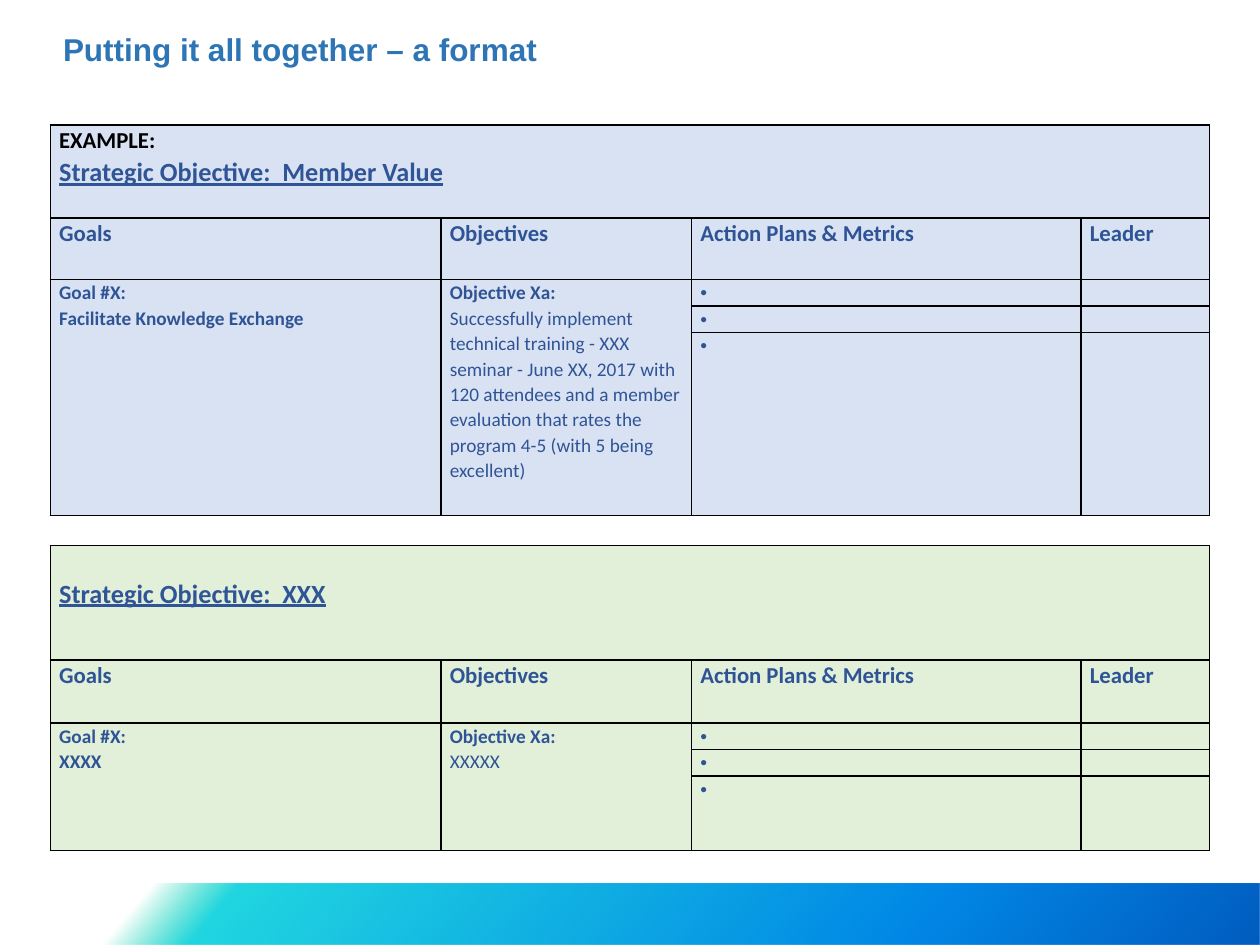
from lxml import etree
from pptx import Presentation
from pptx.dml.color import RGBColor as RGB
from pptx.enum.shapes import MSO_SHAPE as SHAPE
from pptx.enum.text import MSO_ANCHOR as ANCHOR, PP_ALIGN as ALIGN
from pptx.oxml import parse_xml
from pptx.oxml.ns import nsdecls, qn
from pptx.util import Inches, Pt

BLACK = RGB(0x00, 0x00, 0x00)
TITLE_BLUE = RGB(0x2E, 0x75, 0xB6)
HEADING_BLUE = RGB(0x2F, 0x55, 0x97)
TEXT_BLUE = RGB(0x2F, 0x54, 0x96)
PALE_BLUE = RGB(0xD9, 0xE2, 0xF3)
PALE_GREEN = RGB(0xE2, 0xEF, 0xD9)

# Gradient stops of the footer band: position %, colour, opacity %
BAND_STOPS = [(19, RGB(0x03, 0xD4, 0xA8), 0), (25, RGB(0x21, 0xD6, 0xE0), 100),
              (75, RGB(0x00, 0x87, 0xE6), 100), (100, RGB(0x00, 0x5C, 0xBF), 100)]
BAND_ANGLE = 40

HEADERS = ["Goals", "Objectives", "Action Plans & Metrics", "Leader"]
COLS = [31, 19.9, 30.9, 10.2]
NBSP = "\N{NO-BREAK SPACE}"


class Deck:
    """Style and current slide; lengths are units of a 100 x 75 grid."""
    font = "Calibri"
    small, medium, large = 11, 13, 15
    spacing = 1.07
    margin = 0.7

    def __init__(self):
        self.prs = Presentation()
        self.prs.slide_width, self.prs.slide_height = Inches(10), Inches(7.5)
        self.slide = self.prs.slides.add_slide(self.prs.slide_layouts[5])

    def grid(self, *units):
        return [round(self.prs.slide_width * u / 100) for u in units]

    def title(self, text, *box):
        s = self.slide.shapes.title
        s.left, s.top, s.width, s.height = self.grid(*box)
        tf = s.text_frame
        tf.text = text
        tf.word_wrap = False
        tf.vertical_anchor = ANCHOR.MIDDLE
        p = tf.paragraphs[0]
        p.alignment = ALIGN.LEFT
        self.style(p.runs[0], 18, TITLE_BLUE, font="Arial")

    def band(self, *box):
        s = self.slide.shapes.add_shape(SHAPE.RECTANGLE, *self.grid(*box))
        s.shadow.inherit = False
        s.line.fill.background()
        stops = "".join(
            f'<a:gs pos="{pos * 1000}"><a:srgbClr val="{color}">'
            f'<a:alpha val="{alpha * 1000}"/></a:srgbClr></a:gs>'
            for pos, color, alpha in BAND_STOPS)
        gradient = parse_xml(
            f'<a:gradFill {nsdecls("a")} rotWithShape="1"><a:gsLst>{stops}</a:gsLst>'
            f'<a:lin ang="{BAND_ANGLE * 60000}" scaled="0"/></a:gradFill>')
        s._element.spPr.find(qn("a:prstGeom")).addnext(gradient)

    def style(self, r, size, color, bold=True, underline=False, font=None):
        f = r.font
        f.name, f.size, f.bold = font or self.font, Pt(size), bold
        f.underline = underline
        f.color.rgb = color

    def table(self, left, top, cols, rows, fill):
        box = self.grid(left, top, sum(cols), sum(rows))
        table = self.slide.shapes.add_table(len(rows), len(cols), *box).table
        table.first_row = table.horz_banding = False
        for col, width in zip(table.columns, self.grid(*cols)):
            col.width = width
        for row, height in zip(table.rows, self.grid(*rows)):
            row.height = height
        for cell in table.iter_cells():
            self.cell(cell, fill)
        return table

    def cell(self, cell, fill):
        cell.margin_left, cell.margin_right = self.grid(self.margin, self.margin)
        cell.margin_top = cell.margin_bottom = 0
        for side in "LRTB":
            cell._tc.get_or_add_tcPr().append(parse_xml(
                f'<a:ln{side} {nsdecls("a")} w="12700"><a:solidFill>'
                f'<a:srgbClr val="{BLACK}"/></a:solidFill></a:ln{side}>'))
        cell.fill.solid()
        cell.fill.fore_color.rgb = fill
        # Keeps empty cells as low as their row
        end = etree.SubElement(cell.text_frame.paragraphs[0]._p, qn("a:endParaRPr"))
        end.set("sz", str(self.small * 100))

    def fill_text(self, cell, *lines):
        """Each line is a text followed by the arguments of style()."""
        tf = cell.text_frame
        tf.text = "\n".join(line[0] for line in lines)
        for p, (_, *style) in zip(tf.paragraphs, lines):
            p.line_spacing = self.spacing
            self.style(p.runs[0], *style)

    def bullet(self, cell):
        self.fill_text(cell, (NBSP, self.small, TEXT_BLUE))
        pPr = cell.text_frame.paragraphs[0]._p.get_or_add_pPr()
        etree.SubElement(pPr, qn("a:buFont")).set("typeface", "Arial")
        etree.SubElement(pPr, qn("a:buChar")).set("char", "•")

    def plan(self, top, rows, fill, heading, goal, objective, label=None):
        table = self.table(4, top, COLS, rows, fill)
        # Strategic objective across the full width
        head = table.cell(0, 0)
        head.merge(table.cell(0, 3))
        lines = [(heading, self.large, HEADING_BLUE, True, True)]
        if label:
            lines.insert(0, (label, self.medium, BLACK))
        else:
            head.margin_top, = self.grid(2.4)
        self.fill_text(head, *lines)
        # Column headings
        for i, text in enumerate(HEADERS):
            self.fill_text(table.cell(1, i), (text, self.medium, TEXT_BLUE))
        # Goal and objective beside three action rows
        body = [("Goal #X:", goal, True), ("Objective Xa:", objective, False)]
        for i, (name, text, bold) in enumerate(body):
            table.cell(2, i).merge(table.cell(4, i))
            self.fill_text(table.cell(2, i), (name, self.small, TEXT_BLUE),
                           (text, self.small, TEXT_BLUE, bold))
        for row in range(2, 5):
            self.bullet(table.cell(row, 2))


def main():
    deck = Deck()
    deck.band(-9.3, 70.1, 109.3, 4.9)
    deck.title("Putting it all together – a format", 4, 1.9, 40, 4)
    # Worked example
    deck.plan(9.9, [7.4, 4.9, 2.1, 2.1, 14.5], PALE_BLUE,
              "Strategic Objective:  Member Value", "Facilitate Knowledge Exchange",
              "Successfully implement technical training - XXX seminar - June XX, 2017 "
              "with 120 attendees and a member evaluation that rates the program 4-5 "
              "(with 5 being excellent)", label="EXAMPLE:")
    # Blank format
    deck.plan(43.3, [9.1, 5, 2.1, 2.1, 5.9], PALE_GREEN,
              "Strategic Objective:  XXX", "XXXX", "XXXXX")
    deck.prs.save("out.pptx")


if __name__ == "__main__":
    main()
